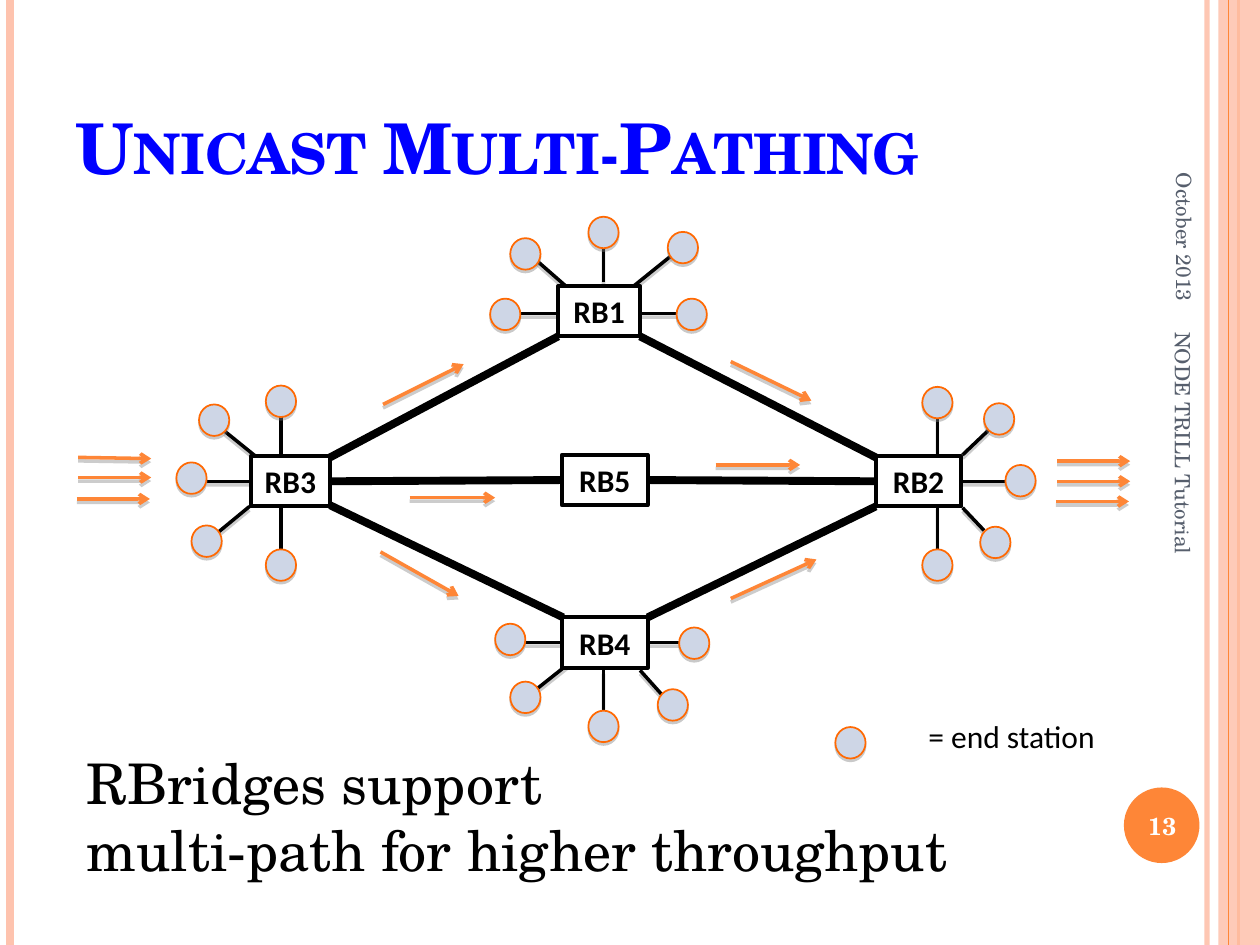
from lxml import etree
from pptx import Presentation
from pptx.dml.color import RGBColor
from pptx.enum.shapes import MSO_CONNECTOR, MSO_SHAPE
from pptx.enum.text import MSO_ANCHOR, PP_ALIGN
from pptx.oxml.ns import qn
from pptx.util import Pt

STRAIGHT = MSO_CONNECTOR.STRAIGHT
RECT, OVAL = MSO_SHAPE.RECTANGLE, MSO_SHAPE.OVAL
TOP, MIDDLE, BOTTOM = MSO_ANCHOR.TOP, MSO_ANCHOR.MIDDLE, MSO_ANCHOR.BOTTOM
LEFT, CENTER, RIGHT = PP_ALIGN.LEFT, PP_ALIGN.CENTER, PP_ALIGN.RIGHT

EMU_PER_PX = 9144
TITLE_ONLY = 5
SERIF, SANS = "TeX Gyre Schola", "Calibri"
COLORS = {
    "black": "000000", "white": "FFFFFF", "blue": "0000FF",
    "orange": "FE8637", "peach": "FEC3AE", "rim": "FF6903",
    "station": "CED6E6", "slate": "575F6D", "shadow": "808080",
}

BRIDGES = [
    ("RB1", 443, 227, 65, [
        (467, 172, 479, 194, 479, 224), (537, 237, 537, 249, 503, 249),
        (389, 237, 413, 249, 447, 249), (405, 189, 425, 206, 449, 227),
        (530, 184, 534, 202, 503, 227)]),
    ("RB2", 695, 362, 68, [
        (732, 307, 744, 332, 744, 362), (781, 320, 785, 341, 764, 361),
        (778, 418, 781, 421, 764, 403), (798, 369, 798, 382, 764, 382),
        (732, 436, 744, 436, 744, 401)]),
    ("RB3", 199, 362, 63, [
        (211, 306, 223, 331, 223, 361), (140, 367, 164, 382, 198, 382),
        (152, 417, 164, 430, 198, 402), (158, 321, 178, 342, 204, 363),
        (211, 436, 223, 436, 223, 401)]),
    ("RB4", 446, 490, 68, [
        (467, 564, 479, 566, 479, 532), (405, 541, 417, 554, 451, 527),
        (522, 547, 525, 551, 508, 532), (539, 498, 539, 510, 505, 510),
        (393, 495, 417, 510, 446, 510)]),
    ("RB5", 446, 361, 68, []),
]
LINKS = [
    (262, 363, 443, 267), (695, 363, 508, 267), (695, 402, 514, 490),
    (447, 490, 262, 401), (262, 382, 446, 381), (514, 381, 695, 382),
]
FLOWS = [
    (62, 363, 120, 364), (62, 379, 120, 379), (61, 396, 119, 396),
    (839, 366, 897, 366), (839, 382, 897, 382), (838, 398, 896, 398),
    (304, 321, 368, 289), (580, 287, 644, 318), (302, 438, 364, 473),
    (580, 475, 648, 444), (325, 395, 393, 395), (568, 369, 635, 369),
]


def px(value):
    return value * EMU_PER_PX


def rgb(name):
    return RGBColor.from_string(COLORS[name])


def set_alpha(fill_parent, percent):
    color = fill_parent.find(".//" + qn("a:srgbClr"))
    etree.SubElement(color, qn("a:alpha"), val=str(percent * 1000))


class SlideBuilder:
    def __init__(self, slide):
        self.slide = slide
        self.shapes = slide.shapes

    def cast_shadow(self, item, distance, alpha):
        properties = item._element.spPr
        effects = properties.find(qn("a:effectLst"))
        if effects is None:
            effects = etree.SubElement(properties, qn("a:effectLst"))
        if distance:
            outer = etree.SubElement(
                effects, qn("a:outerShdw"), blurRad="0", dist=str(Pt(distance)),
                dir="5400000", rotWithShape="0")
            etree.SubElement(outer, qn("a:srgbClr"), val=COLORS["shadow"])
            set_alpha(outer, alpha)

    def line(self, ends, color, width, arrow=False, shadow=False, alpha=100):
        connector = self.shapes.add_connector(STRAIGHT, *map(px, ends))
        connector.line.color.rgb = rgb(color)
        connector.line.width = Pt(width)
        stroke = connector.line._get_or_add_ln()
        if alpha < 100:
            set_alpha(stroke, alpha)
        if arrow:
            etree.SubElement(stroke, qn("a:tailEnd"), type="arrow")
        self.cast_shadow(connector, 2 if shadow else 0, 40)

    def shape(self, kind, box, fill, line=None, width=1):
        shape = self.shapes.add_shape(kind, *map(px, box))
        shape.shadow.inherit = False
        shape.fill.solid()
        shape.fill.fore_color.rgb = rgb(fill)
        if line:
            shape.line.color.rgb = rgb(line)
            shape.line.width = Pt(width)
        else:
            shape.line.fill.background()
        return shape

    def set_text(self, frame, text, size, color, font=SERIF, bold=False,
                 align=LEFT, anchor=TOP, wrap=True):
        frame.text = text
        frame.word_wrap = wrap
        frame.vertical_anchor = anchor
        for paragraph in frame.paragraphs:
            paragraph.alignment = align
            for run in paragraph.runs:
                run.font.name = font
                run.font.size = Pt(size)
                run.font.bold = bold
                run.font.color.rgb = rgb(color)

    def title(self, box, text):
        title = self.shapes.title
        title.left, title.top, title.width, title.height = map(px, box)
        self.set_text(title.text_frame, text, 40, "blue", bold=True, anchor=BOTTOM)
        for run in title.text_frame.paragraphs[0].runs:
            run.font._element.set("cap", "small")

    def text(self, box, text, size, color, rotation=0, **style):
        label = self.shapes.add_textbox(*map(px, box))
        label.rotation = rotation
        self.set_text(label.text_frame, text, size, color, **style)

    def station(self, left, top):
        station = self.shape(OVAL, (left, top, 24, 25), "station", "rim")
        self.cast_shadow(station, 1.6, 42)

    def bridge(self, name, left, top, width, stations):
        for station_left, station_top, *spoke in stations:
            self.line(spoke, "black", 2, shadow=True)
            self.station(station_left, station_top)
        node = self.shape(RECT, (left, top, width, 40), "white", "black", 2.25)
        self.set_text(node.text_frame, name, 18, "black", font=SANS, bold=True,
                      align=CENTER, anchor=MIDDLE, wrap=False)

    def frame(self):
        self.line((958, 0, 958, 750), "peach", 3, alpha=93)
        self.line((8, 0, 8, 750), "peach", 4.5)
        self.line((983, 0, 983, 750), "orange", 1.5)
        band = self.shape(RECT, (967, 0, 33, 750), "peach")
        set_alpha(band._element.spPr, 87)
        self.line((975, 0, 975, 750), "orange", 0.75)
        self.shape(OVAL, (892, 625, 60, 60), "orange")


def main():
    deck = Presentation()
    deck.slide_width, deck.slide_height = px(1000), px(750)
    builder = SlideBuilder(deck.slides.add_slide(deck.slide_layouts[TITLE_ONLY]))

    builder.frame()
    builder.title((50, 30, 817, 125), "Unicast Multi-Pathing")
    builder.text((830, 118, 220, 42), "October 2013", 12, "slate",
                 rotation=90, align=RIGHT, anchor=MIDDLE)
    builder.text((764, 409, 350, 40), "NODE TRILL Tutorial", 12, "slate",
                 rotation=90, anchor=MIDDLE)
    builder.text((889, 627, 67, 57), "13", 14, "white", bold=True,
                 align=CENTER, anchor=MIDDLE)

    for link in LINKS:
        builder.line(link, "black", 4.5)
    for bridge in BRIDGES:
        builder.bridge(*bridge)
    for flow in FLOWS:
        builder.line(flow, "orange", 2, arrow=True, shadow=True)

    builder.station(663, 577)
    builder.text((727, 564, 217, 40), "= end station", 18, "black", font=SANS)
    builder.text((59, 589, 879, 118),
                 "RBridges support\vmulti-path for higher throughput", 32, "black")
    deck.save("out.pptx")


if __name__ == "__main__":
    main()
